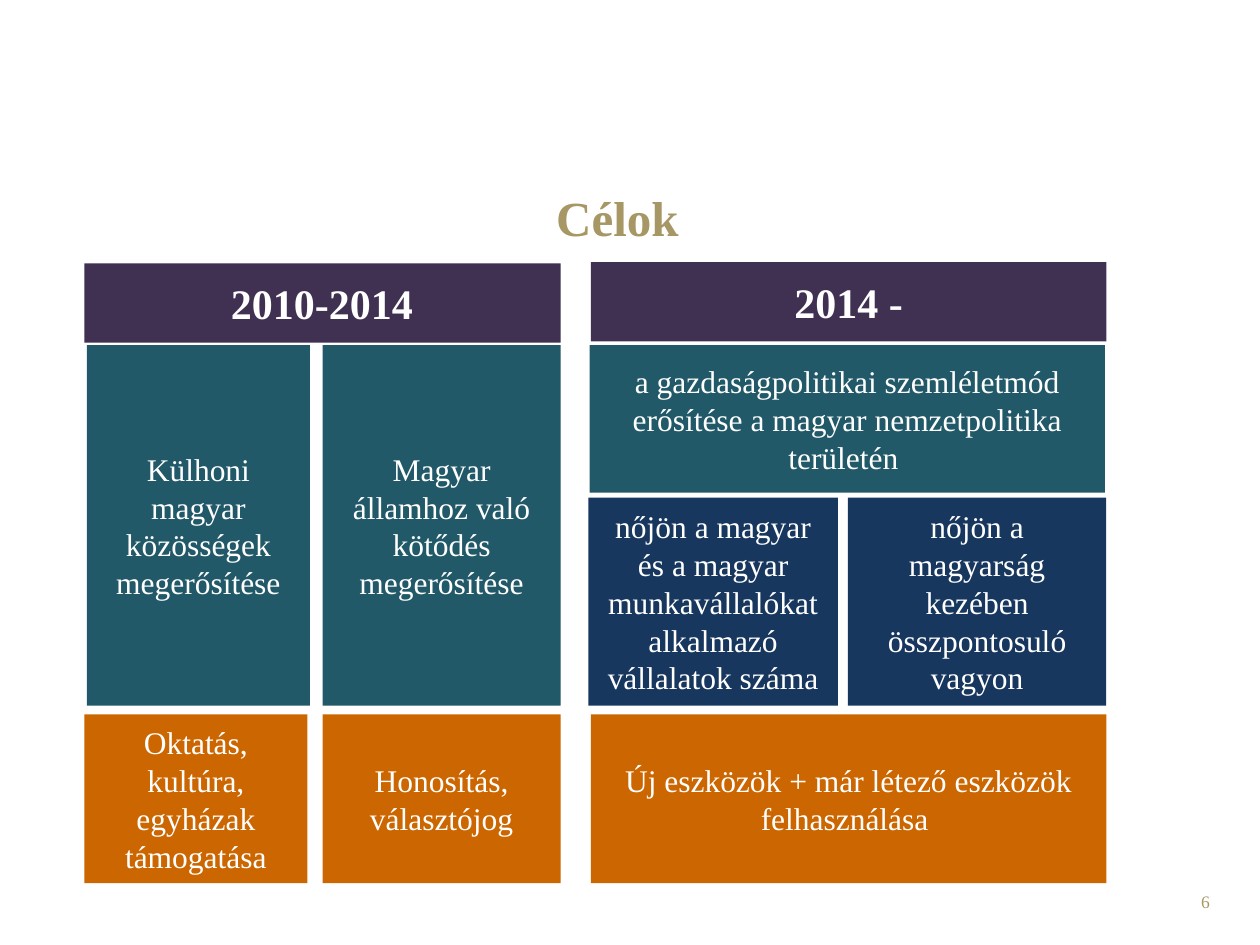
from pptx import Presentation
from pptx.dml.color import RGBColor
from pptx.enum.shapes import MSO_SHAPE
from pptx.enum.text import MSO_ANCHOR, PP_ALIGN
from pptx.util import Inches, Pt

FONT = "Times New Roman"
COLORS = {
    "gold": "A69765",
    "purple": "403152",
    "teal": "215968",
    "navy": "17375E",
    "orange": "CC6600",
    "white": "FFFFFF",
}

# Rows: top, height, fill colour, then blocks as (left, width, text)
ROWS = [
    (2.09, 0.63, "purple", [(0.67, 3.78, "")]),
    (2.08, 0.63, "purple", [(4.69, 4.09, "2014 -")]),
    (2.74, 2.86, "teal", [
        (0.69, 1.77, "Külhoni magyar közösségek megerősítése"),
        (2.56, 1.89, "Magyar államhoz való kötődés megerősítése"),
    ]),
    (2.74, 1.17, "teal", [
        (4.68, 4.09, "a gazdaságpolitikai szemléletmód erősítése "
                     "a magyar nemzetpolitika területén "),
    ]),
    (3.95, 1.65, "navy", [
        (4.67, 1.98, "nőjön a magyar és a magyar munkavállalókat "
                     "alkalmazó vállalatok száma"),
        (6.73, 2.05, "nőjön a magyarság kezében összpontosuló vagyon"),
    ]),
    (5.67, 1.34, "orange", [
        (0.67, 1.77, "Oktatás, kultúra, egyházak támogatása"),
        (2.56, 1.89, "Honosítás, választójog"),
        (4.69, 4.09, "Új eszközök + már létező eszközök felhasználása "),
    ]),
]


def write(shape, text, size=18, color="white", bold=False,
          align=PP_ALIGN.CENTER, anchor=MSO_ANCHOR.MIDDLE, inset=0.05):
    frame = shape.text_frame
    frame.word_wrap = True
    frame.vertical_anchor = anchor
    frame.margin_top = Inches(inset)
    para = frame.paragraphs[0]
    para.alignment = align
    span = para.add_run()
    span.text = text
    span.font.name = FONT
    span.font.size = Pt(size)
    span.font.bold = bold
    span.font.color.rgb = RGBColor.from_string(COLORS[color])


def add_label(page, left, top, width, height, text, **style):
    box = page.shapes.add_textbox(*map(Inches, (left, top, width, height)))
    write(box, text, **style)


def add_block(page, left, top, width, height, fill, text, **style):
    block = page.shapes.add_shape(
        MSO_SHAPE.RECTANGLE, *map(Inches, (left, top, width, height)))
    block.shadow.inherit = False
    block.fill.solid()
    block.fill.fore_color.rgb = RGBColor.from_string(COLORS[fill])
    block.line.fill.background()
    if text:
        write(block, text, **style)


def main():
    deck = Presentation()
    deck.slide_width, deck.slide_height = Inches(10), Inches(7.5)
    page = deck.slides.add_slide(deck.slide_layouts[6])

    add_label(page, 7.37, 7.02, 2.33, 0.4, "6", size=10, color="gold",
              align=PP_ALIGN.RIGHT, anchor=MSO_ANCHOR.TOP)
    add_label(page, 0.51, 1.39, 8.78, 0.72, "Célok", size=28, color="gold",
              bold=True, anchor=MSO_ANCHOR.TOP, inset=0.1)

    for top, height, fill, blocks in ROWS:
        heading = fill == "purple"
        for left, width, text in blocks:
            add_block(page, left, top, width, height, fill, text,
                      size=24 if heading else 18, bold=heading)
    add_label(page, 0.94, 2.15, 3.23, 0.5, "2010-2014", size=24, bold=True,
              anchor=MSO_ANCHOR.TOP)

    deck.save("out.pptx")


if __name__ == "__main__":
    main()
